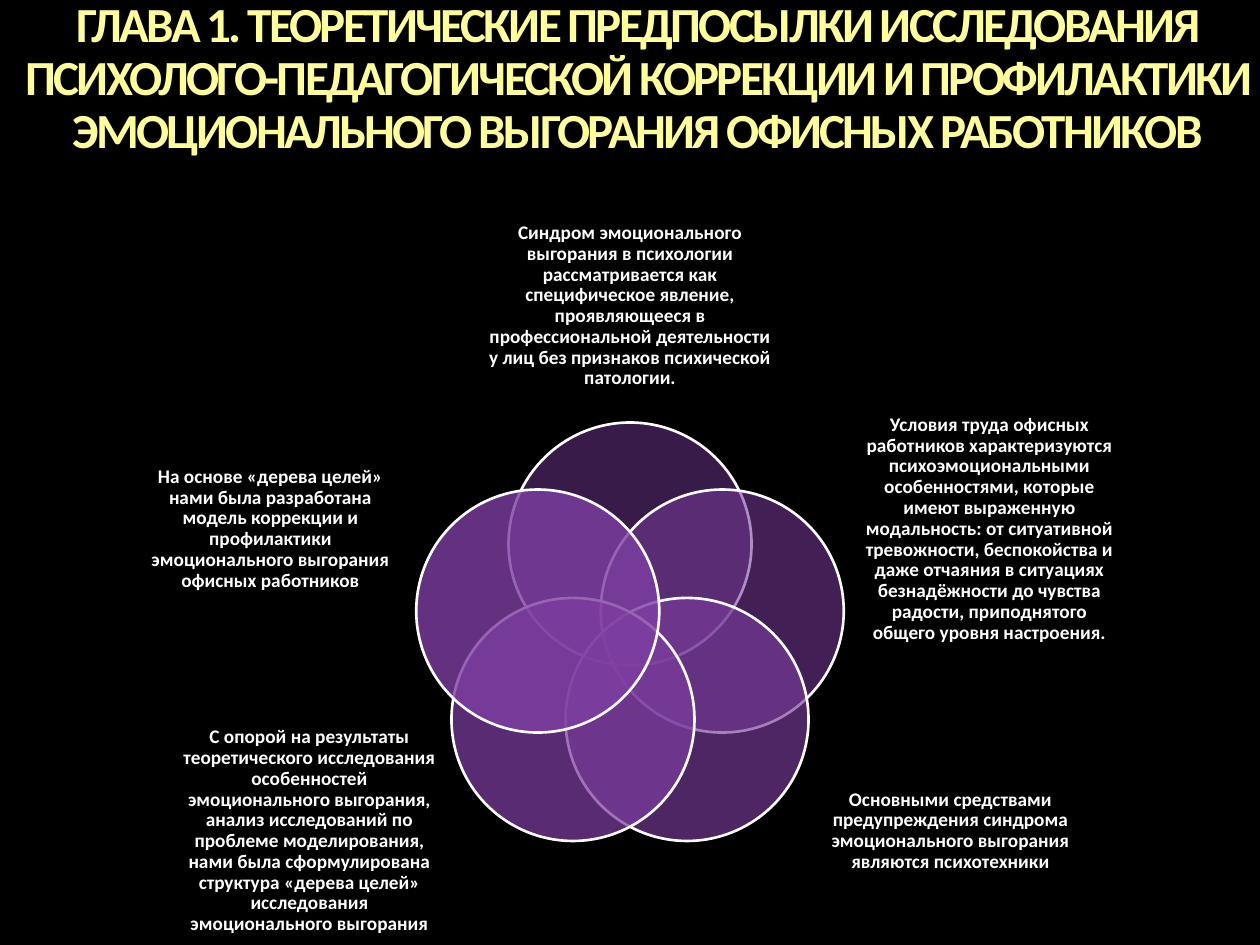
from math import sin, cos, radians
from pptx import Presentation
from pptx.dml.color import RGBColor as RGB
from pptx.enum.shapes import MSO_SHAPE as SHAPE
from pptx.enum.text import MSO_ANCHOR as ANCHOR, PP_ALIGN as ALIGN
from pptx.oxml.ns import qn
from pptx.util import Pt
from lxml.etree import SubElement

HEAD = ("ГЛАВА 1. ТЕОРЕТИЧЕСКИЕ ПРЕДПОСЫЛКИ ИССЛЕДОВАНИЯ "
        "ПСИХОЛОГО-ПЕДАГОГИЧЕСКОЙ КОРРЕКЦИИ И ПРОФИЛАКТИКИ "
        "ЭМОЦИОНАЛЬНОГО ВЫГОРАНИЯ ОФИСНЫХ РАБОТНИКОВ")

# Clockwise from the top: fill, opacity in %, text box in px, text
PETALS = [
    ("713792", 50, (489, 224, 282, 164),
     "Синдром эмоционального выгорания в психологии рассматривается как "
     "специфическое явление, проявляющееся в профессиональной деятельности "
     "у лиц без признаков психической патологии."),
    ("753996", 57, (863, 440, 253, 178),
     "Условия труда офисных работников характеризуются "
     "психоэмоциональными особенностями, которые имеют выраженную "
     "модальность: от ситуативной тревожности, беспокойства и даже отчаяния "
     "в ситуациях безнадёжности до чувства радости, приподнятого общего "
     "уровня настроения."),
    ("783B9A", 65, (824, 742, 253, 178),
     "Основными средствами предупреждения синдрома эмоционального "
     "выгорания являются психотехники"),
    ("7B3C9E", 72, (183, 742, 253, 178),
     "С опорой на результаты теоретического исследования особенностей "
     "эмоционального выгорания, анализ исследований по проблеме "
     "моделирования, нами была сформулирована структура «дерева целей» "
     "исследования эмоционального выгорания"),
    ("7E3EA2", 80, (144, 440, 253, 178),
     "На основе «дерева целей» нами была разработана модель коррекции и "
     "профилактики эмоционального выгорания офисных работников"),
]
COLORS = {"back": "000000", "head": "FFFF99", "text": "FFFFFF", "line": "FFFFFF"}
MID_X, MID_Y, RING, SIZE = 630, 641, 97, 243


def px(n):
    return round(n * 914400 / 126)


def write(text, box, size, color, anchor=ANCHOR.MIDDLE, track=0):
    frame = slide.shapes.add_textbox(*map(px, box)).text_frame
    frame.word_wrap = True
    frame.vertical_anchor = anchor
    frame.margin_left = frame.margin_right = 0
    frame.margin_top = frame.margin_bottom = 0
    para = frame.paragraphs[0]
    para.alignment = ALIGN.CENTER
    para.line_spacing = 0.9
    run = para.add_run()
    run.text = text
    font = run.font
    font.name, font.size, font.bold = "Calibri", Pt(size), True
    font.color.rgb = RGB.from_string(COLORS[color])
    if track:
        run._r.get_or_add_rPr().set("spc", str(track))


def circle(x, y, color, alpha):
    left, top = x - SIZE / 2, y - SIZE / 2
    disc = slide.shapes.add_shape(SHAPE.OVAL, px(left), px(top), px(SIZE), px(SIZE))
    disc.shadow.inherit = False
    disc.fill.solid()
    disc.fill.fore_color.rgb = RGB.from_string(color)
    tint = disc._element.spPr.find(qn("a:solidFill"))[0]
    SubElement(tint, qn("a:alpha")).set("val", str(alpha * 1000))
    disc.line.color.rgb = RGB.from_string(COLORS["line"])
    disc.line.width = Pt(1.5)


deck = Presentation()
deck.slide_width, deck.slide_height = px(1260), px(945)
slide = deck.slides.add_slide(deck.slide_layouts[6])
slide.background.fill.solid()
slide.background.fill.fore_color.rgb = RGB.from_string(COLORS["back"])

# Title
write(HEAD, (0, 0, 1275, 320), 28, "head", anchor=ANCHOR.TOP, track=-150)

# Ring of overlapping circles with their texts
for i, (color, alpha, box, text) in enumerate(PETALS):
    turn = radians(i * 360 / len(PETALS))
    circle(MID_X + RING * sin(turn), MID_Y - RING * cos(turn), color, alpha)
    write(text, box, 11, "text")

deck.save("out.pptx")
